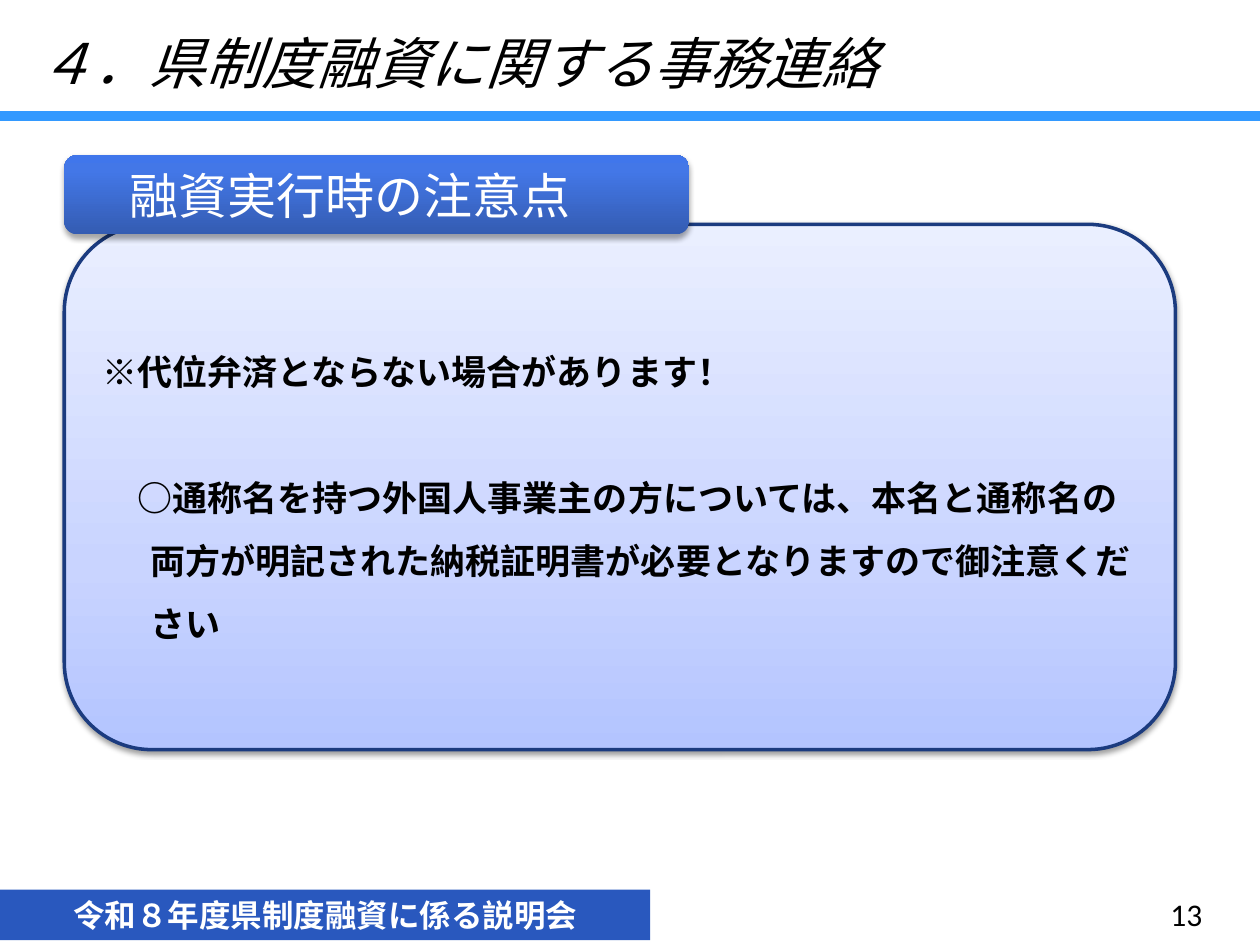
from lxml import etree
from pptx import Presentation
from pptx import util as u
from pptx.dml.color import RGBColor
from pptx.enum import shapes, text
from pptx.oxml import parse_xml
from pptx.oxml.ns import qn

Pt = u.Pt
NS = 'xmlns:a="http://schemas.openxmlformats.org/drawingml/2006/main"'
JP = "Noto Sans CJK JP"


def color(hex_code):
    return RGBColor.from_string(hex_code)


def add_run(paragraph, words, size, hex_code, font=JP, bold=False, italic=False):
    run = paragraph.add_run()
    run.text = words
    run.font.name = font
    run.font.size = Pt(size)
    run.font.bold = bold
    run.font.italic = italic
    run.font.color.rgb = color(hex_code)
    latin = run.font._element.find(qn("a:latin"))
    east_asian = etree.Element(qn("a:ea"), typeface=JP)
    latin.addnext(east_asian)


def set_frame(shape, anchor, left_inset=7.2):
    frame = shape.text_frame
    frame.word_wrap = True
    frame.vertical_anchor = anchor
    frame.margin_left = Pt(left_inset)
    return frame


def add_block(slide, kind, box, fill=None):
    block = slide.shapes.add_shape(kind, *[Pt(v) for v in box])
    block.shadow.inherit = False
    block.line.fill.background()
    if fill:
        block.fill.solid()
        block.fill.fore_color.rgb = color(fill)
    return block


def add_gradient_card(slide, box, stops, shadow_alpha, shadow_distance):
    """Rounded card shaded from bottom to top, with a soft shadow below."""
    card = add_block(slide, shapes.MSO_SHAPE.ROUNDED_RECTANGLE, box)
    gs = "".join(f'<a:gs pos="{pos * 1000}"><a:srgbClr val="{c}"/></a:gs>'
                 for pos, c in stops)
    properties = card._element.spPr
    properties.find(qn("a:prstGeom")).addnext(parse_xml(
        f'<a:gradFill {NS} rotWithShape="1"><a:gsLst>{gs}</a:gsLst>'
        '<a:lin ang="16200000" scaled="0"/></a:gradFill>'))
    properties.find(qn("a:effectLst")).append(parse_xml(
        f'<a:outerShdw {NS} blurRad="{Pt(3.1)}" dist="{Pt(shadow_distance)}" '
        'dir="5400000" rotWithShape="0"><a:srgbClr val="000000">'
        f'<a:alpha val="{shadow_alpha * 1000}"/></a:srgbClr></a:outerShdw>'))
    return card


def add_text_box(slide, box, anchor, left_inset=7.2):
    holder = slide.shapes.add_textbox(*[Pt(v) for v in box])
    return set_frame(holder, anchor, left_inset).paragraphs[0]


def add_rule(slide, y, width, hex_code, weight):
    rule = slide.shapes.add_connector(
        shapes.MSO_CONNECTOR.STRAIGHT, 0, Pt(y), Pt(width), Pt(y))
    rule.line.color.rgb = color(hex_code)
    rule.line.width = Pt(weight)
    etree.SubElement(rule._element.spPr, qn("a:effectLst"))


def add_notice(paragraph, words, hanging, space_before=0):
    paragraph.alignment = text.PP_ALIGN.LEFT
    paragraph.line_spacing = 1.5
    paragraph.space_before = Pt(space_before)
    properties = paragraph._p.get_or_add_pPr()
    properties.set("marL", str(Pt(27.4)))
    properties.set("indent", str(-Pt(hanging)))
    add_run(paragraph, words, 20, "000000", bold=True)


def main():
    deck = Presentation()
    deck.slide_width, deck.slide_height = Pt(720), Pt(540)
    slide = deck.slides.add_slide(deck.slide_layouts[6])
    top, middle = text.MSO_ANCHOR.TOP, text.MSO_ANCHOR.MIDDLE

    # Header rule and footer band
    add_rule(slide, 66.2, 720, "3399FF", 6)
    footer = add_block(slide, shapes.MSO_SHAPE.RECTANGLE,
                       (0, 508.3, 371.5, 29), "2958BE")
    event = set_frame(footer, middle).paragraphs[0]
    event.alignment = text.PP_ALIGN.CENTER
    add_run(event, "令和８年度県制度融資に係る説明会", 18, "FFFFFF", bold=True)

    # Notice panel
    panel = add_gradient_card(
        slide, (36.7, 128.2, 635, 300.2),
        [(0, "B3C4FF"), (35, "C9D4FF"), (100, "EAEFFF")], 38, 1.6)
    panel.line.color.rgb = color("1B3B7F")
    panel.line.width = Pt(2)
    notices = set_frame(panel, middle)
    add_notice(notices.paragraphs[0], "※代位弁済とならない場合があります！", 27.4)
    add_notice(notices.add_paragraph(),
               "○通称名を持つ外国人事業主の方については、本名と通称名の"
               "両方が明記された納税証明書が必要となりますので御注意ください",
               7.4, space_before=36)

    # Title
    title = add_text_box(slide, (0, 13, 586.8, 123.8), top, left_inset=21.5)
    add_run(title, "４．", 32, "000000", italic=True)
    add_run(title, "県制度融資に関する事務連絡", 32, "000000", "Arial", italic=True)

    # Page number
    page = add_text_box(slide, (526.3, 507.6, 167.8, 28.8), middle)
    page.alignment = text.PP_ALIGN.RIGHT
    add_run(page, "13", 18, "000000", "Calibri")

    # Panel heading
    tab = add_gradient_card(
        slide, (36.7, 88.6, 357.1, 45.4),
        [(0, "345CB2"), (80, "4377E7"), (100, "4076EB")], 35, 1.8)
    heading = set_frame(tab, middle, left_inset=35.2).paragraphs[0]
    heading.alignment = text.PP_ALIGN.LEFT
    add_run(heading, "融資実行時の注意点", 28, "FFFFFF", "Calibri")

    deck.save("out.pptx")


if __name__ == "__main__":
    main()
